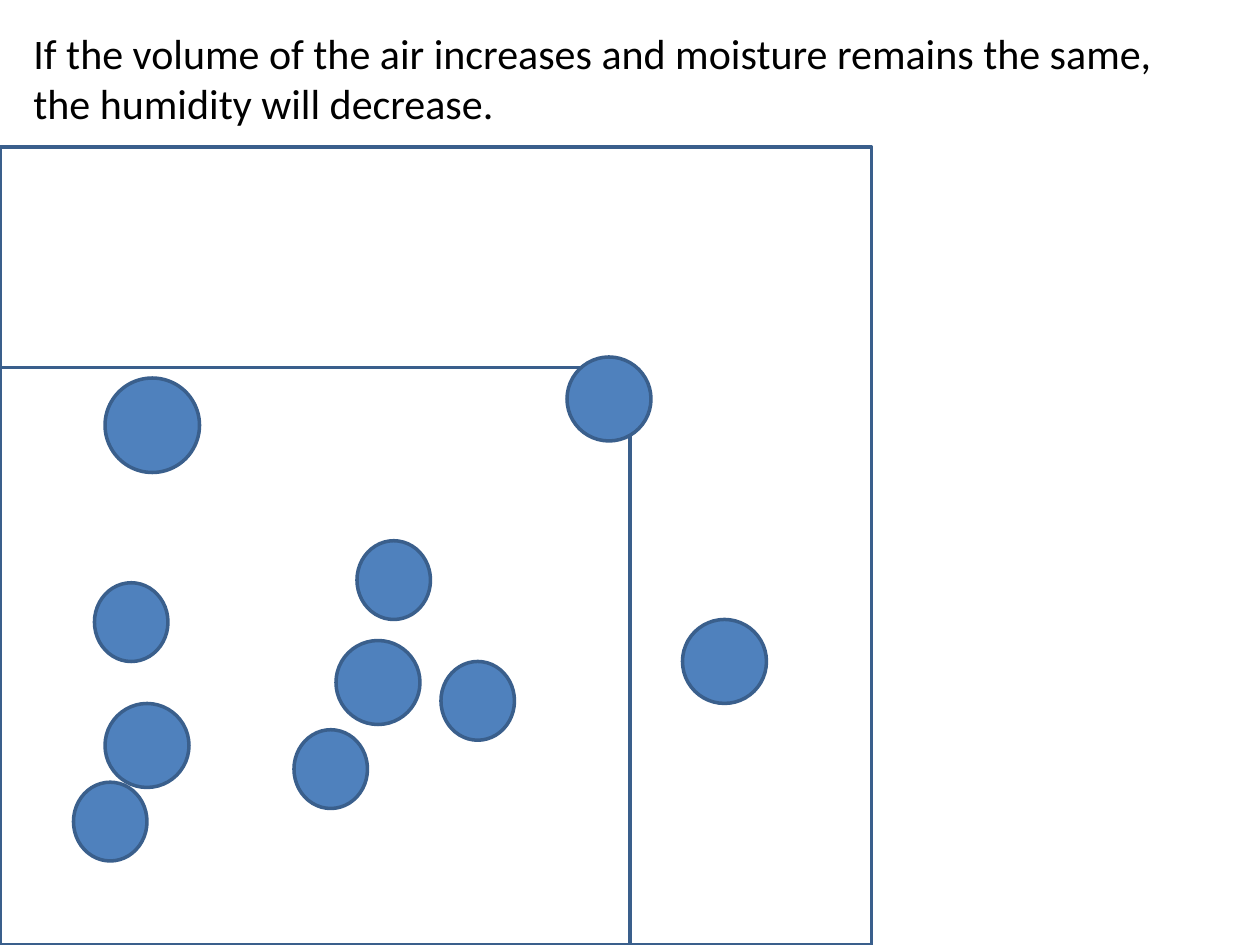
from pptx import Presentation, util as u
from pptx.dml.color import RGBColor
from pptx.enum import shapes, text

SCALE = 7620


def px(*nums):
    return [u.Emu(n * SCALE) for n in nums]


def paint(fmt, color):
    fmt.solid()
    fmt.fore_color.rgb = RGBColor.from_string(color)


def write(frame, words, size=24, font="Calibri", color="000000"):
    run = frame.paragraphs[0].add_run()
    run.text = words
    run.font.size = u.Pt(size)
    run.font.name = font
    paint(run.font.fill, color)


class Page:
    fill = "4F81BD"
    edge = "3A5F8C"
    width = 2

    def __init__(self, slide):
        self.slide = slide

    def shape(self, kind, box):
        item = self.slide.shapes.add_shape(kind, *px(*box))
        item.shadow.inherit = False
        paint(item.line.fill, self.edge)
        item.line.width = u.Pt(self.width)
        return item

    def frame(self, *box):
        item = self.shape(shapes.MSO_SHAPE.RECTANGLE, box)
        item.fill.background()

    def drop(self, x, y, wide, high):
        item = self.shape(shapes.MSO_SHAPE.OVAL, (x, y, wide, high))
        paint(item.fill, self.fill)

    def label(self, words, *box, **style):
        item = self.slide.shapes.add_textbox(*px(*box))
        item.text_frame.word_wrap = True
        item.text_frame.auto_size = text.MSO_AUTO_SIZE.SHAPE_TO_FIT_TEXT
        write(item.text_frame, words, **style)


def main():
    deck = Presentation()
    deck.slide_width, deck.slide_height = px(1200, 900)
    page = Page(deck.slides.add_slide(deck.slide_layouts[6]))

    page.frame(0, 350, 600, 550)
    for x, y in [(90, 555), (420, 630), (340, 515), (70, 745), (280, 695)]:
        page.drop(x, y, 70, 75)

    page.frame(0, 140, 830, 760)
    page.drop(100, 360, 90, 90)
    for x, y in [(540, 340), (320, 610), (650, 590), (100, 670)]:
        page.drop(x, y, 80, 80)

    page.label(
        "If the volume of the air increases and moisture remains the same, "
        "the humidity will decrease.",
        20, 20, 1120, 109, size=24,
    )
    deck.save("out.pptx")


if __name__ == "__main__":
    main()
